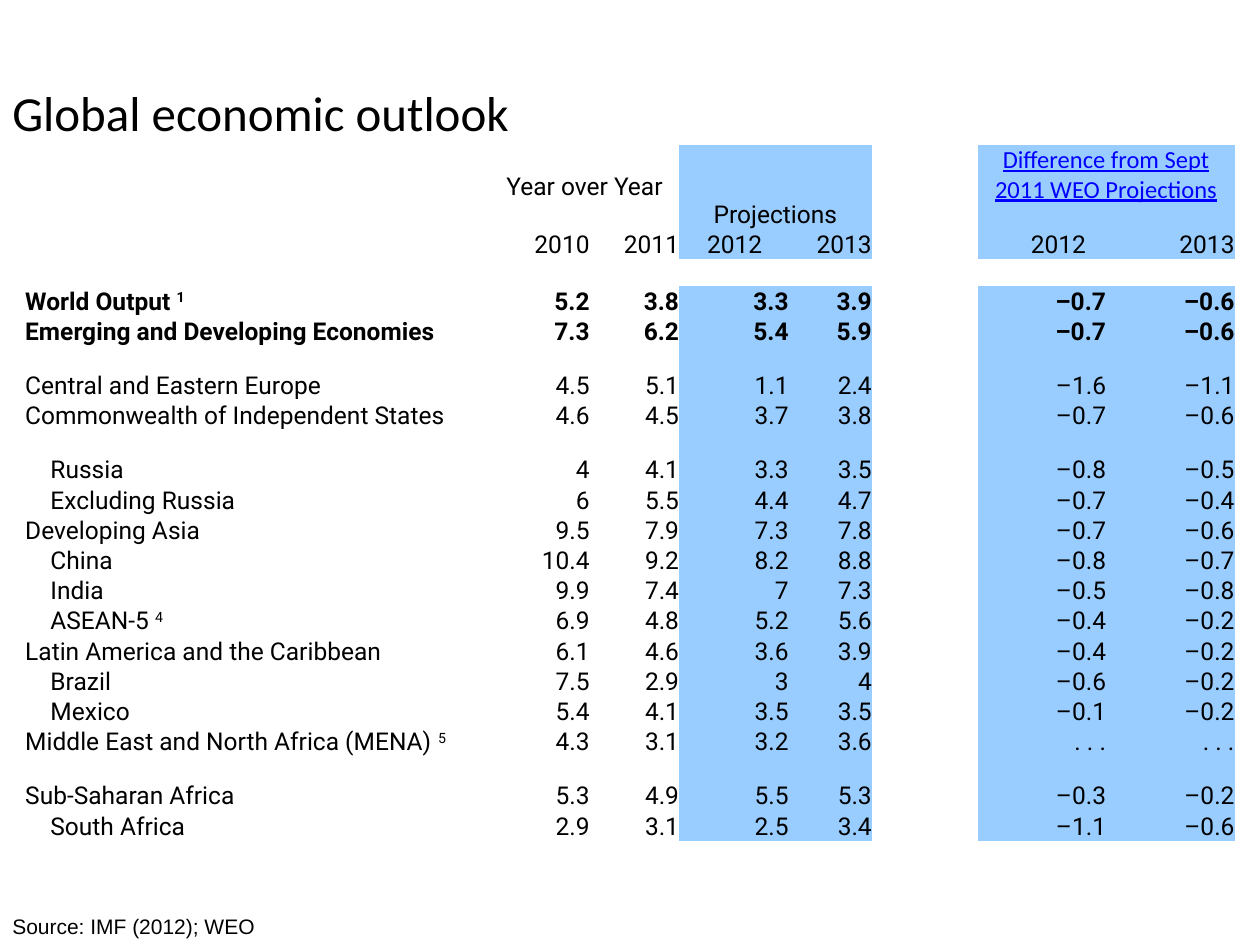
from lxml.etree import SubElement
from pptx import Presentation
from pptx.dml.color import RGBColor
from pptx.enum.text import MSO_ANCHOR, PP_ALIGN
from pptx.oxml.ns import qn
from pptx.util import Inches, Pt

WIDTH, HEIGHT = 10, 7.5
BLACK, LINK, BAND = "000000", "0000FF", "99CCFF"
NO_STYLE = "{2D5ABB26-0587-4C30-8999-92F81FD0307C}"

# Table grid, in inches
COLS = [3.69, 0.79, 0.71, 0.66, 0.21, 0.66, 0.84, 0.86, 0.16, 1.02]
HEADER_ROWS = [0.19, 0.48, 0.24, 0.21]
ROW, TALL_ROW, INDENT = 0.24, 0.43, 0.2
TALL = {"Central and Eastern Europe", "Russia", "Sub-Saharan Africa"}
BOLD = {"World Output", "Emerging and Developing Economies"}

# First column and column span of each of the six value columns
YEAR_SPANS = [(1, 1), (2, 1), (3, 1), (4, 2), (7, 1), (8, 2)]
VALUE_SPANS = [(1, 1), (2, 1), (3, 2), (5, 1), (7, 2), (9, 1)]
YEARS = ["2010", "2011", "2012", "2013", "2012", "2013"]

# Indent level, label, footnote mark, values
REGIONS = [
    (0, "World Output", "1", "5.2 3.8 3.3 3.9 –0.7 –0.6"),
    (0, "Emerging and Developing Economies", "", "7.3 6.2 5.4 5.9 –0.7 –0.6"),
    (0, "Central and Eastern Europe", "", "4.5 5.1 1.1 2.4 –1.6 –1.1"),
    (0, "Commonwealth of Independent States", "", "4.6 4.5 3.7 3.8 –0.7 –0.6"),
    (1, "Russia", "", "4 4.1 3.3 3.5 –0.8 –0.5"),
    (1, "Excluding Russia", "", "6 5.5 4.4 4.7 –0.7 –0.4"),
    (0, "Developing Asia", "", "9.5 7.9 7.3 7.8 –0.7 –0.6"),
    (1, "China", "", "10.4 9.2 8.2 8.8 –0.8 –0.7"),
    (1, "India", "", "9.9 7.4 7 7.3 –0.5 –0.8"),
    (1, "ASEAN-5", "4", "6.9 4.8 5.2 5.6 –0.4 –0.2"),
    (0, "Latin America and the Caribbean", "", "6.1 4.6 3.6 3.9 –0.4 –0.2"),
    (1, "Brazil", "", "7.5 2.9 3 4 –0.6 –0.2"),
    (1, "Mexico", "", "5.4 4.1 3.5 3.5 –0.1 –0.2"),
    (0, "Middle East and North Africa (MENA)", "5", "4.3 3.1 3.2 3.6 ... ..."),
    (0, "Sub-Saharan Africa", "", "5.3 4.9 5.5 5.3 –0.3 –0.2"),
    (1, "South Africa", "", "2.9 3.1 2.5 3.4 –1.1 –0.6"),
]


def color(hex_string):
    return RGBColor.from_string(hex_string)


def format_run(r, size, font, hex_string=BLACK, bold=False):
    r.font.size, r.font.name, r.font.bold = Pt(size), font, bold
    r.font.color.rgb = color(hex_string)


def add_text(slide, text, box, size, font, anchor):
    sp = slide.shapes.add_textbox(*[Inches(v) for v in box])
    tf = sp.text_frame
    tf.word_wrap, tf.vertical_anchor = True, anchor
    tf.text = text
    format_run(tf.paragraphs[0].runs[0], size, font)


def clear_cell(cell):
    """Remove fill and margins, and keep an empty cell from stretching its row."""
    cell.fill.background()
    cell.margin_left = cell.margin_right = cell.margin_top = cell.margin_bottom = 0
    p = cell.text_frame.paragraphs[0]
    SubElement(p._p, qn("a:endParaRPr")).set("sz", "800")


def fill_cell(cell, text, align, anchor=MSO_ANCHOR.BOTTOM, band=False,
              font="Roboto", hex_string=BLACK, bold=False):
    cell.vertical_anchor = anchor
    if band:
        cell.fill.solid()
        cell.fill.fore_color.rgb = color(BAND)
    p = cell.text_frame.paragraphs[0]
    p.text, p.alignment = text, align
    format_run(p.runs[0], 14, font, hex_string, bold)
    return p


def merged(table, row, col, rows, cols):
    cell = table.cell(row, col)
    if rows * cols > 1:
        cell.merge(table.cell(row + rows - 1, col + cols - 1))
    return cell


def add_values(table, row, spans, values, bold=False):
    for (col, span), value in zip(spans, values):
        fill_cell(merged(table, row, col, 1, span), value, PP_ALIGN.RIGHT,
                  band=col >= 3, bold=bold)


def add_label(cell, level, label, mark, bold):
    cell.margin_left = Inches(INDENT * level)
    p = fill_cell(cell, f"{label} " if mark else label, PP_ALIGN.LEFT, bold=bold)
    if mark:
        r = p.add_run()
        r.text = mark
        format_run(r, 14, "Roboto", bold=bold)
        r._r.get_or_add_rPr().set("baseline", "30000")


def add_outlook_table(slide):
    heights = HEADER_ROWS + [TALL_ROW if label in TALL else ROW
                             for _, label, _, _ in REGIONS]
    frame = slide.shapes.add_table(len(heights), len(COLS), Inches(0.2), Inches(1.15),
                                   Inches(sum(COLS)), Inches(sum(heights)))
    table = frame.table
    table.first_row = table.horz_banding = False
    for style in frame.element.iter(qn("a:tableStyleId")):
        style.text = NO_STYLE
    for column, width in zip(table.columns, COLS):
        column.width = Inches(width)
    for row, height in zip(table.rows, heights):
        row.height = Inches(height)
    for cell in table.iter_cells():
        clear_cell(cell)

    # Header groups and years
    center = PP_ALIGN.CENTER
    fill_cell(merged(table, 0, 1, 2, 2), "Year over Year", center, MSO_ANCHOR.MIDDLE)
    fill_cell(merged(table, 0, 3, 2, 3), "Projections", center, band=True)
    p = fill_cell(merged(table, 0, 7, 2, 3), "Difference from Sept 2011 WEO Projections",
                  center, MSO_ANCHOR.TOP, True, "Calibri", LINK)
    p.runs[0].font.underline = True
    add_values(table, 2, YEAR_SPANS, YEARS)
    merged(table, 3, 0, 1, len(COLS))

    # Regions
    for row, (level, label, mark, values) in enumerate(REGIONS, len(HEADER_ROWS)):
        bold = label in BOLD
        add_label(table.cell(row, 0), level, label, mark, bold)
        shown = [". . ." if v == "..." else v for v in values.split()]
        add_values(table, row, VALUE_SPANS, shown, bold)


def main():
    prs = Presentation()
    prs.slide_width, prs.slide_height = Inches(WIDTH), Inches(HEIGHT)
    slide = prs.slides.add_slide(prs.slide_layouts[6])

    # Title, table, source line
    add_text(slide, "Global economic outlook", (0, 0.58, 0.9 * WIDTH, 0.61),
             28, "Calibri", MSO_ANCHOR.MIDDLE)
    add_outlook_table(slide)
    add_text(slide, "Source: IMF (2012); WEO", (0, 0.96 * HEIGHT, 2.56, 0.3),
             12, "Arial", MSO_ANCHOR.TOP)
    prs.save("out.pptx")


if __name__ == "__main__":
    main()
